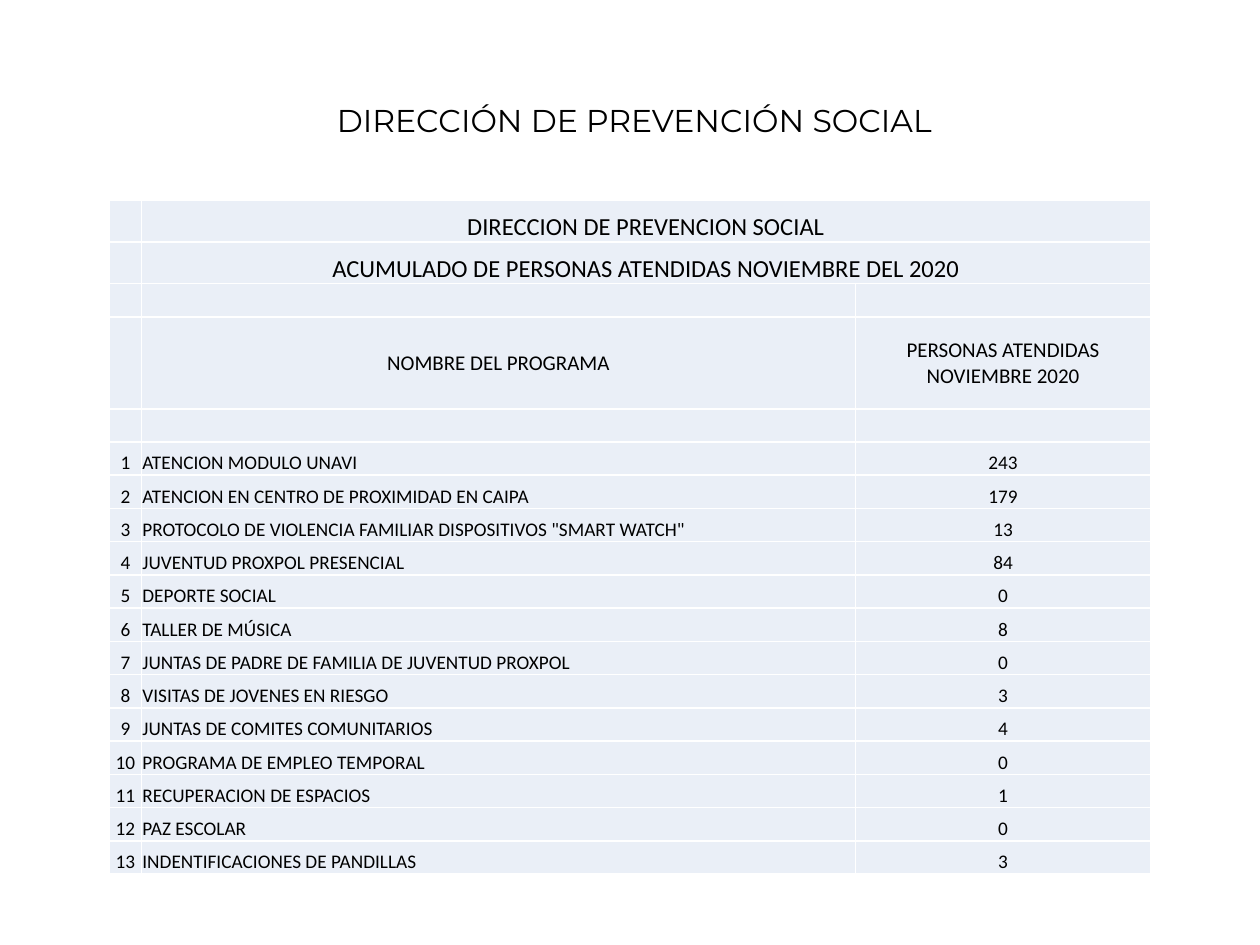
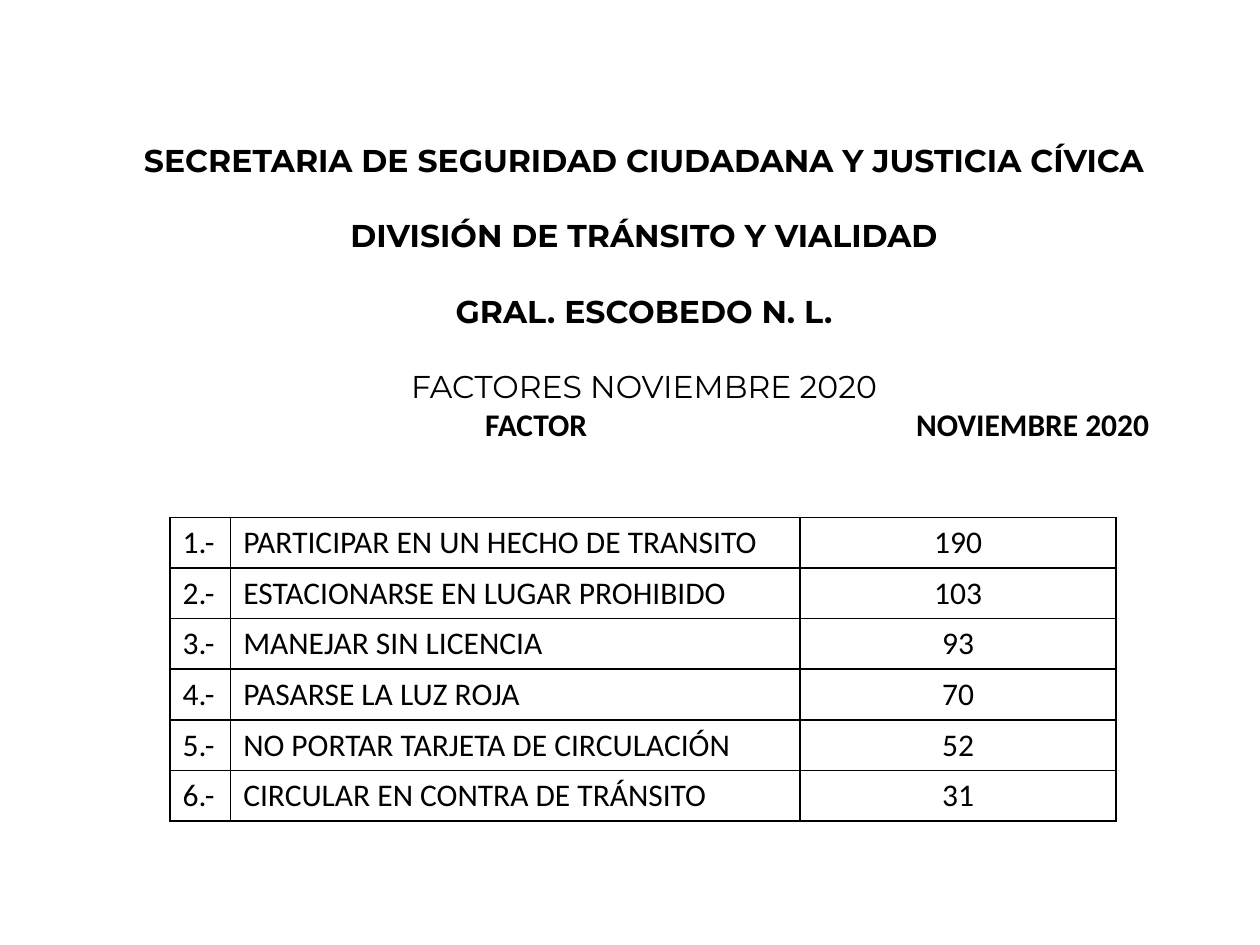
"""Builds two slides on prevention programmes and traffic factors."""
from lxml import etree
from pptx import Presentation
from pptx.dml.color import RGBColor
from pptx.enum.text import MSO_ANCHOR, PP_ALIGN
from pptx.oxml.ns import qn
from pptx.util import Cm, Pt

LEFT, CENTER = PP_ALIGN.LEFT, PP_ALIGN.CENTER
TOP, MIDDLE, BOTTOM = MSO_ANCHOR.TOP, MSO_ANCHOR.MIDDLE, MSO_ANCHOR.BOTTOM
BLACK, WHITE, PALE_BLUE = "000000", "FFFFFF", "EAEFF7"
TITLE_FONT, BODY_FONT = "Montserrat", "Calibri"
TITLE_SIZE = 18
BLANK_LAYOUT = 6

PROGRAMS = [
    ("ATENCION MODULO UNAVI", 243),
    ("ATENCION EN CENTRO DE PROXIMIDAD EN CAIPA", 179),
    ('PROTOCOLO DE VIOLENCIA FAMILIAR DISPOSITIVOS "SMART WATCH"', 13),
    ("JUVENTUD PROXPOL PRESENCIAL", 84),
    ("DEPORTE SOCIAL", 0),
    ("TALLER DE MÚSICA", 8),
    ("JUNTAS DE PADRE DE FAMILIA DE JUVENTUD PROXPOL", 0),
    ("VISITAS DE JOVENES EN RIESGO", 3),
    ("JUNTAS DE COMITES COMUNITARIOS", 4),
    ("PROGRAMA DE EMPLEO TEMPORAL", 0),
    ("RECUPERACION DE ESPACIOS", 1),
    ("PAZ ESCOLAR", 0),
    ("INDENTIFICACIONES DE PANDILLAS", 3),
]
FACTORS = [
    ("PARTICIPAR EN UN HECHO DE TRANSITO", 190),
    ("ESTACIONARSE EN LUGAR PROHIBIDO", 103),
    ("MANEJAR SIN LICENCIA", 93),
    ("PASARSE LA LUZ ROJA", 70),
    ("NO PORTAR TARJETA DE CIRCULACIÓN", 52),
    ("CIRCULAR EN CONTRA DE TRÁNSITO", 31),
]


def color(value):
    """Turn a hex string into a colour."""
    return RGBColor.from_string(value)


def write(para, text, size, font=BODY_FONT, bold=False, align=LEFT):
    """Put text in a paragraph and style it."""
    para.text = text
    para.alignment = align
    para.font.size = Pt(size)
    para.font.name = font
    para.font.bold = bold
    para.font.color.rgb = color(BLACK)


def add_text_frame(page, left, top, width, height):
    """Add a wrapping text box and return its frame."""
    frame = page.shapes.add_textbox(Cm(left), Cm(top), Cm(width), Cm(height)).text_frame
    frame.word_wrap = True
    return frame


def add_tabs(para, *positions):
    """Give a paragraph left tab stops, in centimetres."""
    tabs = etree.SubElement(para._p.get_or_add_pPr(), qn("a:tabLst"))
    for position in positions:
        etree.SubElement(tabs, qn("a:tab"), pos=str(Cm(position)), algn="l")


def add_borders(cell, line_color):
    """Draw a one-point line on each side of a cell."""
    properties = cell._tc.get_or_add_tcPr()
    for side in ("lnL", "lnR", "lnT", "lnB"):
        line = etree.SubElement(properties, qn(f"a:{side}"), w=str(Pt(1)))
        fill = etree.SubElement(line, qn("a:solidFill"))
        etree.SubElement(fill, qn("a:srgbClr"), val=line_color)


def add_grid(page, left, top, widths, heights, line_color, fill=None):
    """Add a plain table with uniform borders and fill."""
    table = page.shapes.add_table(
        len(heights), len(widths), Cm(left), Cm(top), Cm(sum(widths)), Cm(sum(heights))
    ).table
    table.first_row = table.horz_banding = False
    for column, width in zip(table.columns, widths):
        column.width = Cm(width)
    for row, height in zip(table.rows, heights):
        row.height = Cm(height)
    for cell in table.iter_cells():
        add_borders(cell, line_color)
        if fill:
            cell.fill.solid()
            cell.fill.fore_color.rgb = color(fill)
        else:
            cell.fill.background()
    return table


def fill_row(table, index, texts, size, aligns, anchor=TOP):
    """Write one table row, keeping empty cells at the same text size."""
    for cell, text, align in zip(table.rows[index].cells, texts, aligns):
        cell.vertical_anchor = anchor
        para = cell.text_frame.paragraphs[0]
        if text:
            write(para, text, size, align=align)
        else:
            etree.SubElement(para._p, qn("a:endParaRPr"), sz=str(size * 100))


def build_prevention(page):
    """Build the slide of people served by each programme."""
    title = add_text_frame(page, 4.09, 1.91, 17.4, 1.02)
    write(title.paragraphs[0], "DIRECCIÓN DE PREVENCIÓN SOCIAL", TITLE_SIZE, TITLE_FONT, align=CENTER)

    heights = [0.84, 0.84, 0.67, 1.85] + [0.67] * (len(PROGRAMS) + 1)
    table = add_grid(page, 2.21, 4.04, [0.64, 14.4, 5.94], heights, WHITE, PALE_BLUE)
    for cell in table.iter_cells():
        cell.margin_left = cell.margin_right = cell.margin_top = Cm(0.02)
        cell.margin_bottom = 0

    empty = ("", "", "")
    centered = (CENTER, CENTER, CENTER)
    headings = [
        (("", "DIRECCION DE PREVENCION SOCIAL", ""), 14, BOTTOM),
        (("", "ACUMULADO DE PERSONAS ATENDIDAS NOVIEMBRE DEL 2020", ""), 14, BOTTOM),
        (empty, 11, BOTTOM),
        (("", "NOMBRE DEL PROGRAMA", "PERSONAS ATENDIDAS NOVIEMBRE 2020"), 12, MIDDLE),
        (empty, 11, BOTTOM),
    ]
    for index, (texts, size, anchor) in enumerate(headings):
        fill_row(table, index, texts, size, centered, anchor)
    for index in range(2):
        table.cell(index, 1).merge(table.cell(index, 2))
    for number, (program, people) in enumerate(PROGRAMS, 1):
        texts = (str(number), program, str(people))
        fill_row(table, len(headings) + number - 1, texts, 11, (CENTER, LEFT, CENTER), BOTTOM)


def build_traffic(page):
    """Build the slide of traffic factors."""
    frame = add_text_frame(page, 2.24, 2.72, 21.49, 7.19)
    headings = [
        ("SECRETARIA DE SEGURIDAD CIUDADANA Y JUSTICIA CÍVICA", True),
        ("DIVISIÓN DE TRÁNSITO Y VIALIDAD", True),
        ("GRAL. ESCOBEDO N. L.", True),
        ("FACTORES NOVIEMBRE 2020", False),
    ]
    for index, (text, bold) in enumerate(headings):
        para = frame.add_paragraph() if index else frame.paragraphs[0]
        write(para, text, TITLE_SIZE, TITLE_FONT, bold, CENTER)
        if index:
            para.space_before = Pt(21.5)
    labels = frame.add_paragraph()
    add_tabs(labels, 7.29, 15.98)
    write(labels, "\tFACTOR\tNOVIEMBRE 2020", TITLE_SIZE, bold=True)

    table = add_grid(page, 3.43, 10.43, [1.22, 11.48, 6.37], [1.02] * len(FACTORS), BLACK)
    for index, (factor, count) in enumerate(FACTORS):
        texts = (f"{index + 1}.-", factor, str(count))
        fill_row(table, index, texts, 18, (LEFT, LEFT, CENTER))


def main():
    """Build and save the deck."""
    deck = Presentation()
    deck.slide_width, deck.slide_height = Cm(25.4), Cm(19.05)
    for build in (build_prevention, build_traffic):
        build(deck.slides.add_slide(deck.slide_layouts[BLANK_LAYOUT]))
    deck.save("out.pptx")


if __name__ == "__main__":
    main()
